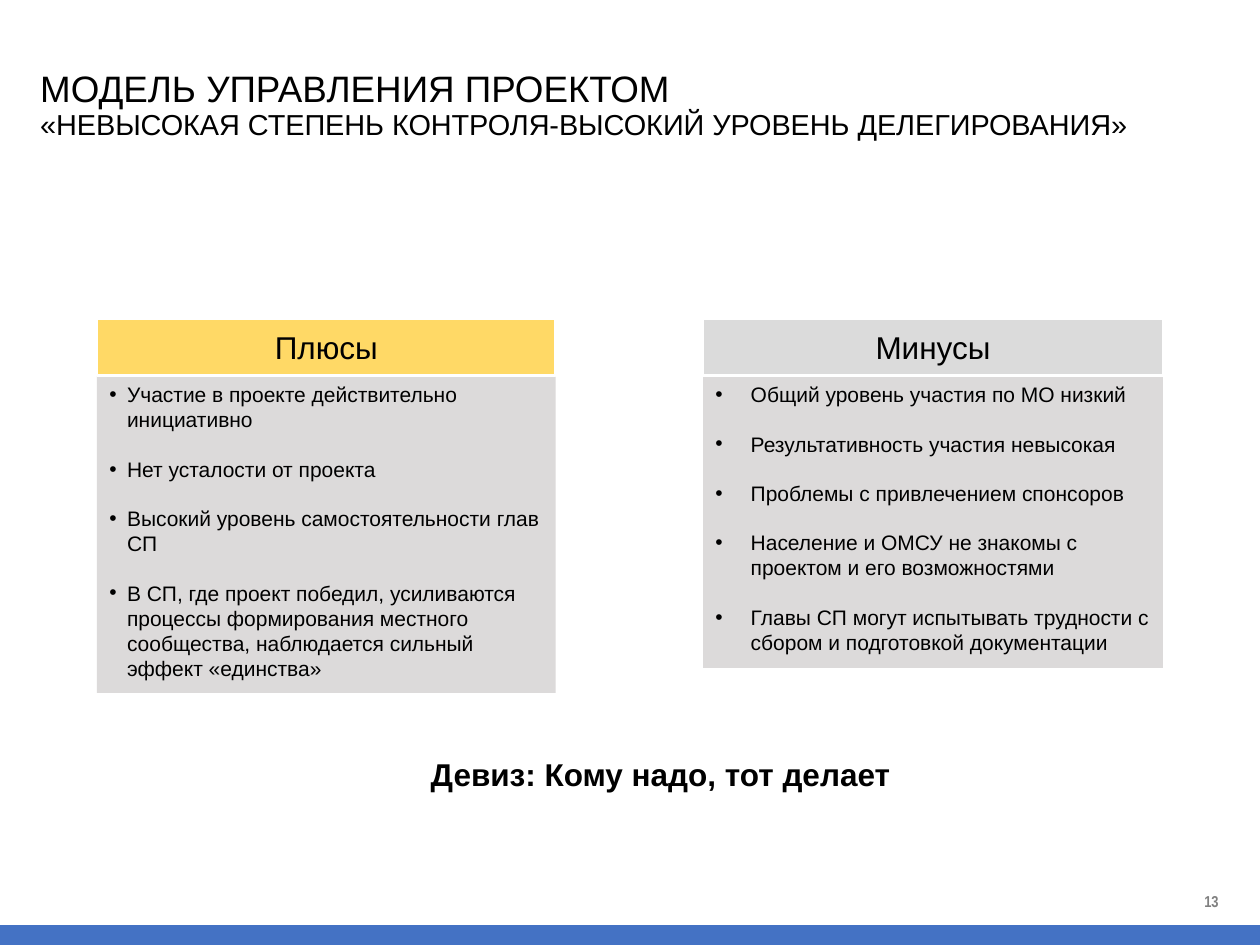
from lxml import etree
from pptx import Presentation
from pptx import util as u
from pptx.dml.color import RGBColor
from pptx.enum import shapes, text
from pptx.oxml.ns import qn

COLORS = {"black": "000000", "white": "FFFFFF", "gray": "808080", "panel": "DCDADA",
          "plus": "FFD966", "minus": "DBDBDB", "footer": "4472C4"}

TITLE = [("МОДЕЛЬ УПРАВЛЕНИЯ ПРОЕКТОМ", 21),
         ("«НЕВЫСОКАЯ СТЕПЕНЬ КОНТРОЛЯ-ВЫСОКИЙ УРОВЕНЬ ДЕЛЕГИРОВАНИЯ»", 16.5)]
MOTTO = "Девиз: Кому надо, тот делает"
PAGE = "13"
COLUMNS = [
    {"heading": "Плюсы", "color": "plus", "left": 0.77, "width": 3.64,
     "height": 2.52, "indent": 0.14,
     "points": ["Участие в проекте действительно инициативно",
                "Нет усталости от проекта",
                "Высокий уровень самостоятельности глав СП",
                "В СП, где проект победил, усиливаются процессы формирования "
                "местного сообщества, наблюдается сильный эффект «единства»"]},
    {"heading": "Минусы", "color": "minus", "left": 5.58, "width": 3.65,
     "height": 2.32, "indent": 0.28,
     "points": ["Общий уровень участия по МО низкий",
                "Результативность участия невысокая",
                "Проблемы с привлечением спонсоров",
                "Население и ОМСУ не знакомы с проектом и его возможностями",
                "Главы СП могут испытывать трудности с сбором и подготовкой документации"]},
]
HEADING_TOP, HEADING_HEIGHT = 2.53, 0.45
POINT_GAP = 13.8  # one line of 12 pt text

MIDDLE = {"vertical_anchor": text.MSO_ANCHOR.MIDDLE}
GROW = {"auto_size": text.MSO_AUTO_SIZE.SHAPE_TO_FIT_TEXT}


def rgb(name):
    return RGBColor.from_string(COLORS[name])


def set_frame(shape, settings):
    frame = shape.text_frame
    for key, value in {"word_wrap": True, **settings}.items():
        setattr(frame, key, value)
    return frame


def add_box(slide, at, fill, line=None):
    box = slide.shapes.add_shape(shapes.MSO_SHAPE.RECTANGLE, *map(u.Inches, at))
    box.shadow.inherit = False
    box.fill.solid()
    box.fill.fore_color.rgb = rgb(fill)
    if line:
        box.line.color.rgb = rgb(line)
        box.line.width = u.Pt(1.5)
    else:
        box.line.fill.background()
    return box


def add_label(slide, at, settings):
    return set_frame(slide.shapes.add_textbox(*map(u.Inches, at)), settings)


def write(paragraph, words, size, color="black", align=text.PP_ALIGN.LEFT, **font):
    paragraph.alignment = align
    run = paragraph.add_run()
    run.text = words
    run.font.color.rgb = rgb(color)
    for key, value in {"name": "Arial", "size": u.Pt(size), **font}.items():
        setattr(run.font, key, value)


def add_bullet(paragraph, indent):
    props = paragraph._p.get_or_add_pPr()
    props.set("marL", str(u.Inches(indent)))
    props.set("indent", str(-u.Inches(indent)))
    etree.SubElement(props, qn("a:buFont")).set("typeface", "Arial")
    etree.SubElement(props, qn("a:buChar")).set("char", "•")


def add_column(slide, column):
    left, width = column["left"], column["width"]
    panel_top = HEADING_TOP + HEADING_HEIGHT
    panel = add_box(slide, (left, panel_top, width, column["height"]), "panel")
    frame = set_frame(panel, {**GROW, "vertical_anchor": text.MSO_ANCHOR.TOP})
    for i, point in enumerate(column["points"]):
        paragraph = frame.add_paragraph() if i else frame.paragraphs[0]
        paragraph.space_before = u.Pt(POINT_GAP if i else 0)
        write(paragraph, point, 12)
        add_bullet(paragraph, column["indent"])

    heading = add_box(slide, (left, HEADING_TOP, width, HEADING_HEIGHT),
                      column["color"], "white")
    write(set_frame(heading, MIDDLE).paragraphs[0], column["heading"], 18,
          align=text.PP_ALIGN.CENTER)


def main():
    deck = Presentation()
    deck.slide_width, deck.slide_height = u.Inches(10), u.Inches(7.5)
    slide = deck.slides.add_slide(deck.slide_layouts[6])

    # Footer band
    add_box(slide, (0, 7.35, 10, 0.15), "footer", "footer")

    # Title, two sizes in one paragraph
    title = add_label(slide, (0.22, 0.4, 9.45, 0.89), MIDDLE).paragraphs[0]
    title.line_spacing = 0.9
    for i, (words, size) in enumerate(TITLE):
        if i:
            title.add_line_break()
        write(title, words, size)

    # Pros and cons
    for column in COLUMNS:
        add_column(slide, column)

    # Motto and page number
    motto = add_label(slide, (3.32, 5.94, 3.98, 0.4), GROW)
    write(motto.paragraphs[0], MOTTO, 18, bold=True)
    page = add_label(slide, (7.75, 6.95, 2.02, 0.4), MIDDLE)
    write(page.paragraphs[0], PAGE, 9, "gray", text.PP_ALIGN.RIGHT,
          name="Arial Narrow", bold=True)

    deck.save("out.pptx")


if __name__ == "__main__":
    main()
